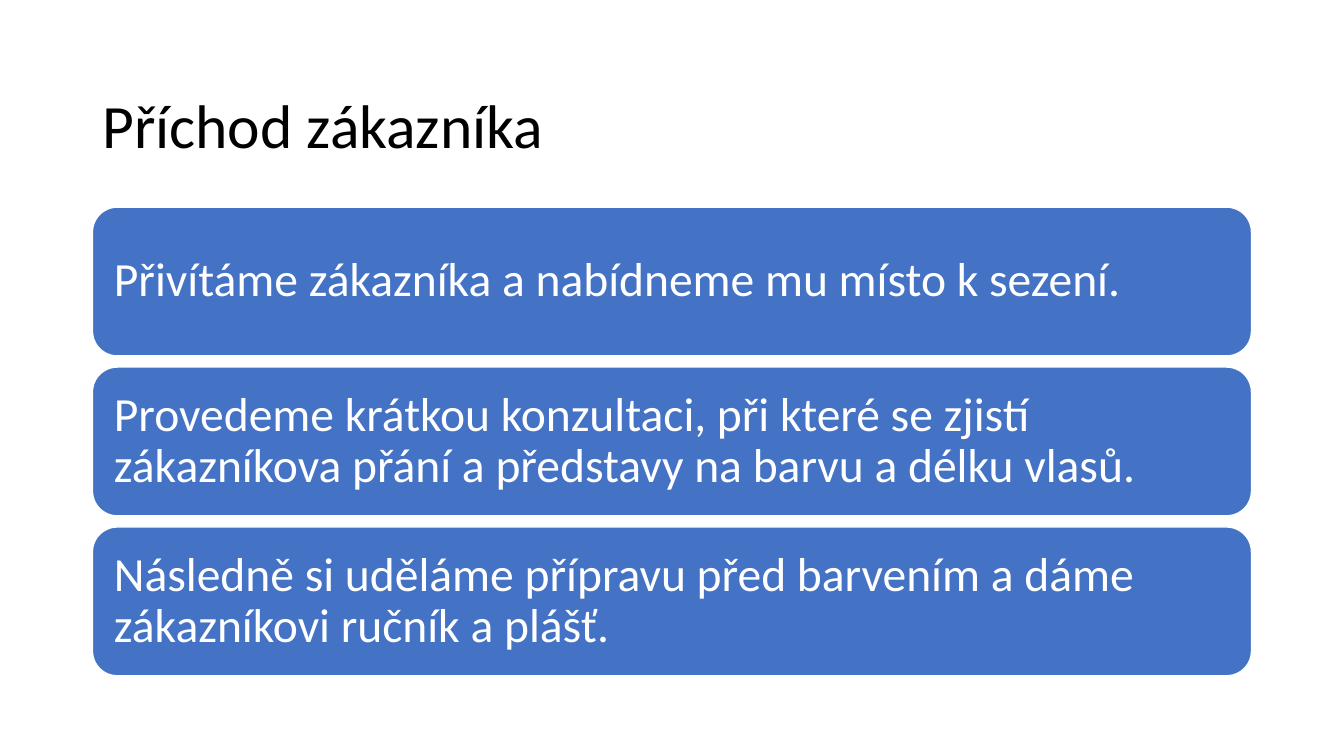
from pptx import Presentation
from pptx.dml.color import RGBColor
from pptx.enum.shapes import MSO_SHAPE as Shape
from pptx.enum.text import MSO_ANCHOR as Anchor, PP_ALIGN as Align
from pptx.util import Cm, Pt

COLORS = {"title": "000000", "card": "4472C4", "light": "FFFFFF"}
LEFT, WIDTH = 2.33, 29.21
CARD_TOP, CARD_HEIGHT, CARD_PITCH = 5.22, 3.75, 4.03

STEPS = [
    "Přivítáme zákazníka a nabídneme mu místo k sezení.",
    "Provedeme krátkou konzultaci, při které se zjistí zákazníkova přání "
    "a představy na barvu a délku vlasů.",
    "Následně si uděláme přípravu před barvením a dáme zákazníkovi ručník a plášť.",
]


class SlideBuilder:
    """Holds the text style and the current slide."""

    def __init__(self, slide, font="Calibri"):
        self.slide = slide
        self.font = font

    def color(self, key):
        return RGBColor.from_string(COLORS[key])

    def fill_text(self, frame, text, size, color, inset_x, inset_y):
        frame.word_wrap = True
        frame.vertical_anchor = Anchor.MIDDLE
        frame.margin_left = frame.margin_right = Cm(inset_x)
        frame.margin_top = frame.margin_bottom = Cm(inset_y)
        paragraph = frame.paragraphs[0]
        paragraph.alignment = Align.LEFT
        paragraph.line_spacing = 0.9
        run = paragraph.add_run()
        run.text = text
        run.font.name = self.font
        run.font.size = Pt(size)
        run.font.color.rgb = self.color(color)

    def title(self, text, top, height):
        heading = self.slide.shapes.add_textbox(Cm(LEFT), Cm(top), Cm(WIDTH), Cm(height))
        self.fill_text(heading.text_frame, text, 44, "title", 0.25, 0.13)

    def card(self, text, top):
        card = self.slide.shapes.add_shape(
            Shape.ROUNDED_RECTANGLE, Cm(LEFT), Cm(top), Cm(WIDTH), Cm(CARD_HEIGHT))
        card.shadow.inherit = False
        card.fill.solid()
        card.fill.fore_color.rgb = self.color("card")
        card.line.color.rgb = self.color("light")
        card.line.width = Pt(1)
        self.fill_text(card.text_frame, text, 34, "light", 0.36, 0.36)


def main():
    presentation = Presentation()
    presentation.slide_width, presentation.slide_height = Cm(33.87), Cm(19.05)
    builder = SlideBuilder(presentation.slides.add_slide(presentation.slide_layouts[6]))

    # Heading
    builder.title("Příchod zákazníka", 1.4, 3.68)

    # Steps on the customer's arrival
    for index, step in enumerate(STEPS):
        builder.card(step, CARD_TOP + index * CARD_PITCH)

    presentation.save("out.pptx")


if __name__ == "__main__":
    main()
